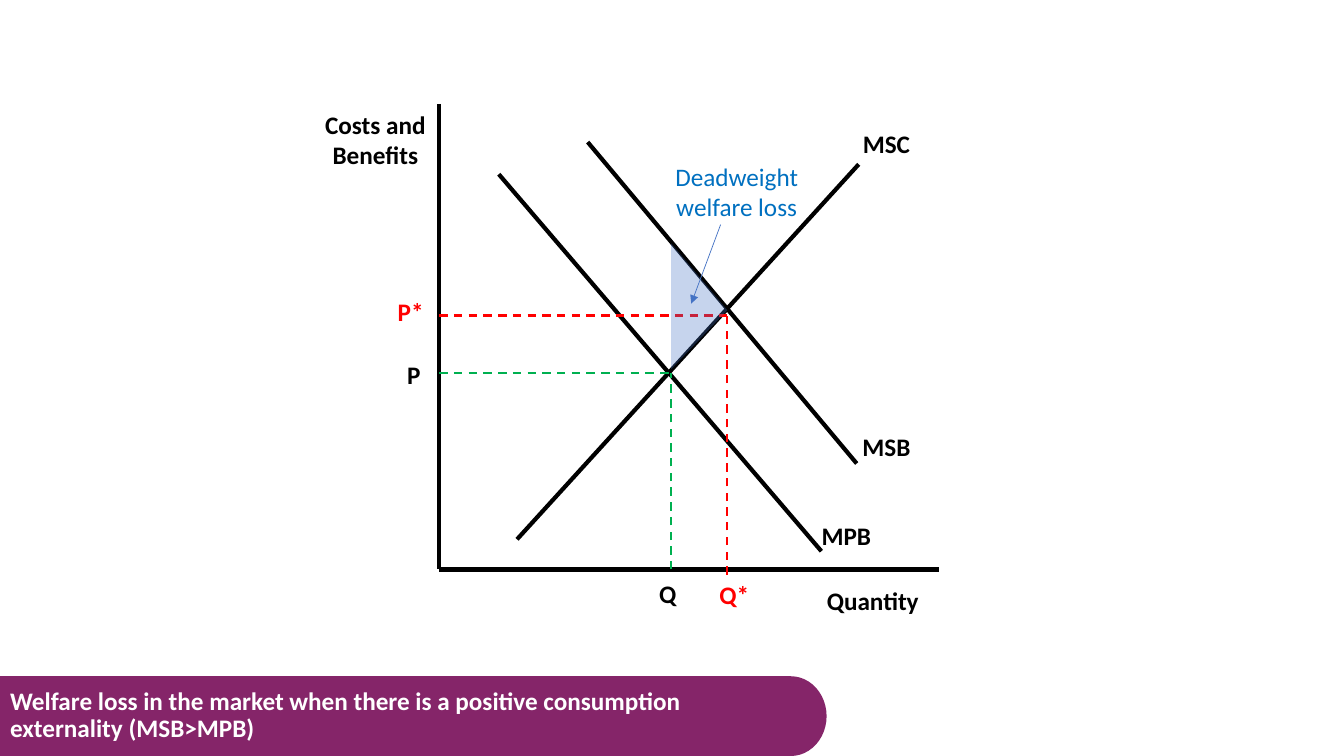
from dataclasses import dataclass

from lxml import etree
from pptx import Presentation
from pptx.dml.color import RGBColor
from pptx.enum import dml, shapes, text
from pptx.oxml import ns
from pptx.util import Cm, Pt


@dataclass(frozen=True)
class Theme:
    font: str = "Calibri"
    size: int = 18
    ink: str = "000000"
    white: str = "FFFFFF"
    banner: str = "852569"
    market: str = "00B050"
    optimum: str = "FF0000"
    loss: str = "4472C4"
    loss_text: str = "0070C0"
    curve: float = 3
    guide: float = 1.5
    arrow: float = 0.5


T = Theme()
LEFT, CENTER = text.PP_ALIGN.LEFT, text.PP_ALIGN.CENTER

prs = Presentation()
prs.slide_width, prs.slide_height = Cm(33.87), Cm(19.05)
s = prs.slides.add_slide(prs.slide_layouts[5])


def add_line(x1, y1, x2, y2, color, width, dashed=False):
    c = s.shapes.add_connector(shapes.MSO_CONNECTOR.STRAIGHT,
                               Cm(x1), Cm(y1), Cm(x2), Cm(y2))
    c.line.color.rgb = RGBColor.from_string(color)
    c.line.width = Pt(width)
    if dashed:
        c.line.dash_style = dml.MSO_LINE.DASH
    etree.SubElement(c.element.spPr, ns.qn("a:effectLst"))
    return c


def write(tf, words, color, align, bold=True):
    tf.word_wrap = True
    p = tf.paragraphs[0]
    p.alignment = align
    r = p.add_run()
    r.text = words
    r.font.name, r.font.size, r.font.bold = T.font, Pt(T.size), bold
    r.font.color.rgb = RGBColor.from_string(color)
    return p


# Banner: a bar with a rounded right end
for kind, x, width, turn in [(shapes.MSO_SHAPE.RECTANGLE, 0, 19, 0),
                             (shapes.MSO_SHAPE.FLOWCHART_STORED_DATA, 15.42, 5.41, 180)]:
    sp = s.shapes.add_shape(kind, Cm(x), Cm(17.04), Cm(width), Cm(2.01))
    sp.rotation = turn
    sp.shadow.inherit = False
    sp.fill.solid()
    sp.fill.fore_color.rgb = RGBColor.from_string(T.banner)
    sp.line.fill.background()

# Axes
x0, y0 = 11.07, 14.35
add_line(x0, 2.62, x0, y0, T.ink, T.curve)
add_line(x0, y0, 23.67, y0, T.ink, T.curve)

# Curves MPB, MSC and MSB
for ends in [(12.57, 4.39, 20.7, 13.89),
             (21.64, 4.14, 13.03, 13.59),
             (14.81, 3.58, 21.59, 11.68)]:
    add_line(*ends, T.ink, T.curve)

# Dashed guides from each equilibrium to the axes
for x, y, foot, color in [(16.92, 9.4, y0, T.market),
                          (18.31, 7.95, 14.48, T.optimum)]:
    add_line(x0, y, x, y, color, T.guide, dashed=True)
    add_line(x, foot, x, y, color, T.guide, dashed=True)

# Deadweight loss area
sp = s.shapes.add_shape(shapes.MSO_SHAPE.ISOSCELES_TRIANGLE,
                        Cm(16.03), Cm(7.01), Cm(3.18), Cm(1.42))
sp.rotation = 90
sp.adjustments[0] = 0.531
sp.shadow.inherit = False
sp.fill.solid()
sp.fill.fore_color.rgb = RGBColor.from_string(T.loss)
fill_color = sp.element.spPr.find(".//" + ns.qn("a:srgbClr"))
etree.SubElement(fill_color, ns.qn("a:alpha"), val="30000")
sp.line.fill.background()

arrow = add_line(18.16, 5.66, 17.42, 7.65, T.loss, T.arrow)
etree.SubElement(arrow.line._get_or_add_ln(), ns.qn("a:tailEnd"), type="triangle")

# Labels
for words, x, y, width, height, color, align in [
    ("Costs and Benefits", 7.87, 2.62, 3.18, 1.8, T.ink, CENTER),
    ("Quantity", 20.04, 14.63, 3.91, 1.02, T.ink, CENTER),
    ("MPB", 19.74, 12.98, 3.18, 1.02, T.ink, CENTER),
    ("MSC", 20.75, 3.12, 3.18, 1.02, T.ink, CENTER),
    ("MSB", 20.75, 10.74, 3.18, 1.02, T.ink, CENTER),
    ("P", 10.01, 8.92, 4.75, 1.02, T.ink, LEFT),
    ("Q", 16.36, 14.45, 4.75, 1.02, T.ink, LEFT),
    ("P*", 8.76, 7.34, 3.18, 1.02, T.optimum, CENTER),
    ("Q*", 17.88, 14.48, 1.3, 1.02, T.optimum, LEFT),
    ("Deadweight welfare loss", 15.95, 3.94, 5.23, 1.8, T.loss_text, CENTER),
]:
    sp = s.shapes.add_textbox(Cm(x), Cm(y), Cm(width), Cm(height))
    write(sp.text_frame, words, color, align, bold=color != T.loss_text)

# Title, in front of the banner
title = s.shapes.title
title.left, title.top, title.width, title.height = Cm(0), Cm(17.04), Cm(20), Cm(2.01)
tf = title.text_frame
tf.auto_size = text.MSO_AUTO_SIZE.NONE
tf.vertical_anchor = text.MSO_ANCHOR.MIDDLE
p = write(tf, "Welfare loss in the market when there is a positive "
              "consumption externality (MSB>MPB)", T.white, LEFT)
p.line_spacing = 0.9
title.element.getparent().append(title.element)

prs.save("out.pptx")
